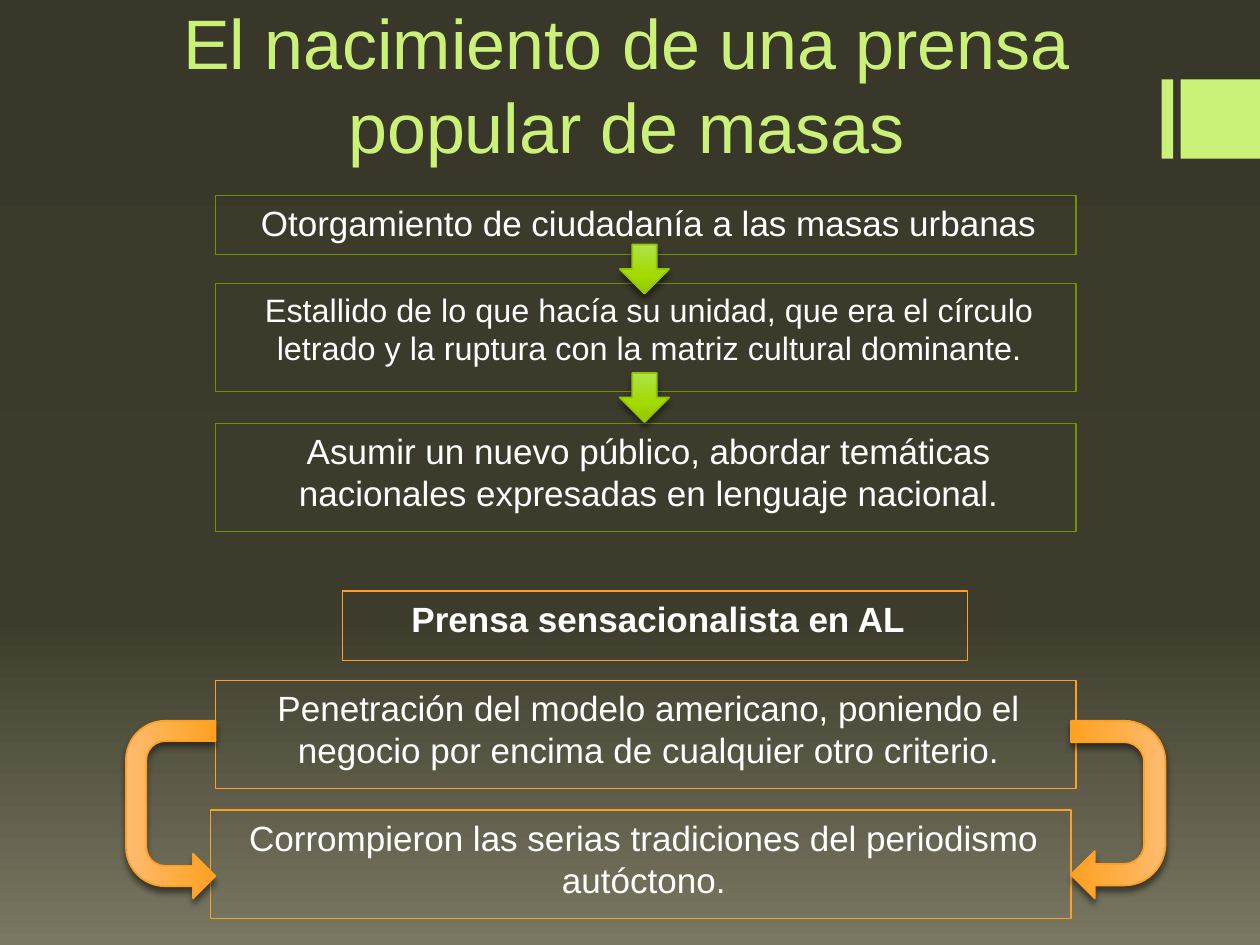
import pptx
import pptx.util
import pptx.dml.color
import pptx.enum.shapes
import pptx.enum.text
import pptx.oxml
import pptx.oxml.ns
from pptx.util import Inches

RGBColor = pptx.dml.color.RGBColor
MSO_SHAPE = pptx.enum.shapes.MSO_SHAPE
PP_ALIGN = pptx.enum.text.PP_ALIGN
MSO_ANCHOR = pptx.enum.text.MSO_ANCHOR

LIME = RGBColor(0xCA, 0xF2, 0x78)
WHITE = RGBColor(0xFF, 0xFF, 0xFF)
GREEN = RGBColor(0x94, 0xC6, 0x00)
DARK_GREEN = RGBColor(0x6F, 0x94, 0x00)
ORANGE = RGBColor(0xFE, 0xA0, 0x22)
BACKGROUND_COLORS = [RGBColor(0x38, 0x37, 0x29), RGBColor(0x3D, 0x3C, 0x2C), RGBColor(0x7A, 0x78, 0x62)]
GREEN_COLORS = [RGBColor(0xAF, 0xE2, 0x4A), RGBColor(0xA3, 0xDA, 0x00), GREEN]
ORANGE_COLORS = [RGBColor(0xFF, 0xBB, 0x71), RGBColor(0xFF, 0xAC, 0x3E), ORANGE]
NAMESPACE = pptx.oxml.ns.nsdecls("a")


def paint_gradient(element, fill, colors, middle):
    """Fill from top to bottom with three colours."""
    fill.gradient()
    fill.gradient_angle = 270
    stops = "".join(
        f'<a:gs pos="{position * 1000}"><a:srgbClr val="{color}"/></a:gs>'
        for position, color in zip((0, middle, 100), colors))
    old_stops = next(element.iter(pptx.oxml.ns.qn("a:gsLst")))
    old_stops.getparent().replace(
        old_stops, pptx.oxml.parse_xml(f"<a:gsLst {NAMESPACE}>{stops}</a:gsLst>"))


def write_text(shape, text, size, color, bold=False):
    """Put one centred paragraph in a shape."""
    text_frame = shape.text_frame
    text_frame.word_wrap = True
    text_frame.text = text
    paragraph = text_frame.paragraphs[0]
    paragraph.alignment = PP_ALIGN.CENTER
    font = paragraph.runs[0].font
    font.name = "Arial"
    font.size = pptx.util.Pt(size)
    font.bold = bold
    font.color.rgb = color
    return paragraph


presentation = pptx.Presentation()
presentation.slide_width = Inches(10)
presentation.slide_height = Inches(7.5)
slide = presentation.slides.add_slide(presentation.slide_layouts[6])
paint_gradient(slide.element, slide.background.fill, BACKGROUND_COLORS, 65)

# Side accent
for left, width in ((9.22, 0.09), (9.37, 0.63)):
    accent = slide.shapes.add_shape(
        MSO_SHAPE.RECTANGLE, Inches(left), Inches(0.63), Inches(width), Inches(0.63))
    accent.shadow.inherit = False
    accent.fill.solid()
    accent.fill.fore_color.rgb = LIME
    accent.line.fill.background()

# Title
title = slide.shapes.add_textbox(Inches(0.37), Inches(-0.11), Inches(9.2), Inches(1.49))
title.text_frame.vertical_anchor = MSO_ANCHOR.BOTTOM
write_text(title, "El nacimiento de una prensa popular de masas", 40, LIME)

# Framed statements: left, top, width, height, line colour, size, bold, text
statements = [
    (1.71, 1.55, 6.83, 0.47, DARK_GREEN, 20, False,
     "Otorgamiento de ciudadanía a las masas urbanas"),
    (1.71, 2.25, 6.83, 0.86, DARK_GREEN, 18.5, False,
     "Estallido de lo que hacía su unidad, que era el círculo letrado y la ruptura "
     "con la matriz cultural dominante."),
    (1.71, 3.36, 6.83, 0.86, DARK_GREEN, 20, False,
     "Asumir un nuevo público, abordar temáticas nacionales expresadas en lenguaje nacional."),
    (2.72, 4.69, 4.96, 0.55, ORANGE, 20, True, "Prensa sensacionalista en AL"),
    (1.71, 5.4, 6.83, 0.86, ORANGE, 20, False,
     "Penetración del modelo americano, poniendo el negocio por encima de cualquier otro criterio."),
    (1.67, 6.43, 6.83, 0.86, ORANGE, 20, False,
     "Corrompieron las serias tradiciones del periodismo autóctono."),
]
for left, top, width, height, color, size, bold, text in statements:
    box = slide.shapes.add_shape(
        MSO_SHAPE.RECTANGLE, Inches(left), Inches(top), Inches(width), Inches(height))
    box.shadow.inherit = False
    box.fill.background()
    box.line.color.rgb = color
    box.line.width = pptx.util.Pt(0.75)
    box.text_frame.vertical_anchor = MSO_ANCHOR.TOP
    paragraph = write_text(box, text, size, WHITE, bold)
    paragraph.space_before = pptx.util.Pt(size * 0.2)
    paragraph._p.get_or_add_pPr().set("marL", str(Inches(0.05)))

# Arrows: preset, left, top, width, height, line colour, gradient, flipped
arrows = [
    (MSO_SHAPE.DOWN_ARROW, 4.92, 1.94, 0.39, 0.39, GREEN, GREEN_COLORS, False),
    (MSO_SHAPE.DOWN_ARROW, 4.92, 2.96, 0.39, 0.39, GREEN, GREEN_COLORS, False),
    (MSO_SHAPE.U_TURN_ARROW, 8.17, 6.05, 1.41, 0.75, ORANGE, ORANGE_COLORS, False),
    (MSO_SHAPE.U_TURN_ARROW, 0.65, 6.07, 1.41, 0.71, ORANGE, ORANGE_COLORS, True),
]
for preset, left, top, width, height, color, gradient, flipped in arrows:
    arrow = slide.shapes.add_shape(
        preset, Inches(left), Inches(top), Inches(width), Inches(height))
    paint_gradient(arrow._element, arrow.fill, gradient, 60)
    arrow.line.color.rgb = color
    arrow.line.width = pptx.util.Pt(1)
    if preset == MSO_SHAPE.U_TURN_ARROW:
        arrow.rotation = 90
        for index, value in enumerate((0.227, 0.25, 0.25, 0.438, 1)):
            arrow.adjustments[index] = value
    if flipped:
        arrow._element.spPr.xfrm.set("flipV", "1")
    # Soft shadow below
    arrow._element.spPr.append(pptx.oxml.parse_xml(
        f'<a:effectLst {NAMESPACE}><a:outerShdw blurRad="{pptx.util.Pt(3.8)}" '
        f'dist="{pptx.util.Pt(3)}" dir="5400000" rotWithShape="0"><a:srgbClr val="000000">'
        '<a:alpha val="48000"/></a:srgbClr></a:outerShdw></a:effectLst>'))

presentation.save("out.pptx")
